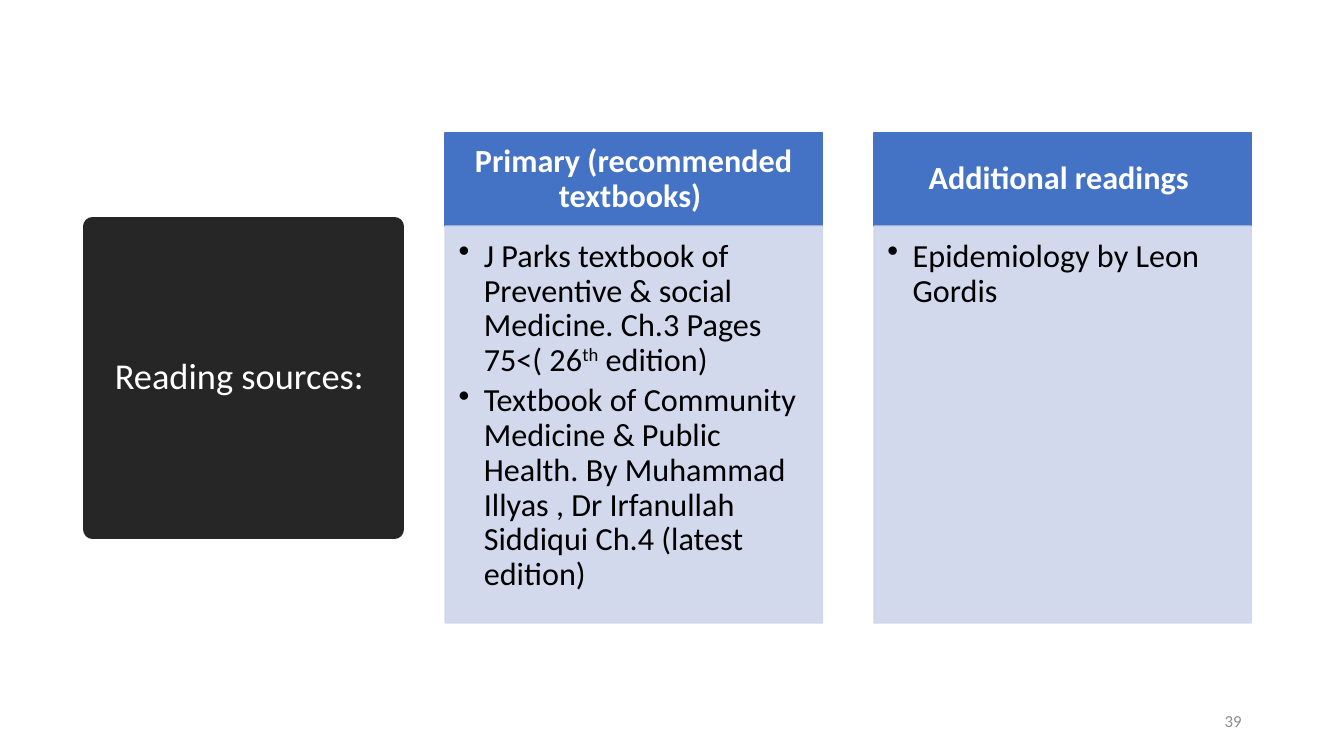
from lxml.etree import SubElement
from pptx import Presentation
from pptx.dml.color import RGBColor
from pptx.enum.shapes import MSO_SHAPE as Shape
from pptx.enum.text import MSO_ANCHOR as Anchor, PP_ALIGN as Align
from pptx.oxml.ns import qn
from pptx.util import Pt

CHARCOAL = RGBColor(0x26, 0x26, 0x26)
BLUE = RGBColor(0x44, 0x72, 0xC4)
PALE_BLUE = RGBColor(0xCF, 0xD5, 0xEA)
WHITE = RGBColor(0xFF, 0xFF, 0xFF)
BLACK = RGBColor(0, 0, 0)
GREY = RGBColor(0x8C, 0x8C, 0x8C)

FONT = "Calibri"
HEADER_HEIGHT = 66.4
COLUMN_WIDTH = 269.5
COLUMN_GAP = 36.8

READINGS = [
    ("Primary (recommended textbooks) ", [
        [("J Parks textbook of Preventive & social Medicine. Ch.3 Pages 75<( 26", False),
         ("th", True), (" edition)", False)],
        [("Textbook of Community Medicine & Public Health. By Muhammad Illyas , "
          "Dr Irfanullah Siddiqui Ch.4 (latest edition)", False)],
    ]),
    ("Additional readings ", [[("Epidemiology by Leon Gordis", False)]]),
]


def add_box(slide, box, color, line_width):
    shape = slide.shapes.add_shape(Shape.RECTANGLE, *map(Pt, box))
    shape.shadow.inherit = False
    shape.fill.solid()
    shape.fill.fore_color.rgb = color
    shape.line.color.rgb = color
    shape.line.width = Pt(line_width)
    return shape


def set_frame(shape, anchor, margins):
    frame = shape.text_frame
    frame.word_wrap = True
    frame.vertical_anchor = anchor
    (frame.margin_left, frame.margin_top,
     frame.margin_right, frame.margin_bottom) = map(Pt, margins)
    return frame


def style_paragraph(paragraph, size, color, align, bold=False, spacing=0.9):
    paragraph.alignment = align
    paragraph.line_spacing = spacing
    font = paragraph.font
    font.name, font.size, font.bold = FONT, Pt(size), bold
    font.color.rgb = color


def add_bullet(paragraph):
    properties = paragraph._p.get_or_add_pPr()
    properties.set("marL", str(Pt(18)))
    properties.set("indent", str(Pt(-18)))
    bullet = properties.makeelement(qn("a:buChar"), {"char": "•"})
    properties.find(qn("a:defRPr")).addprevious(bullet)


def add_title(slide, box):
    shape = add_box(slide, box, CHARCOAL, 13.75)
    SubElement(shape.line._get_or_add_ln(), qn("a:round"))
    paragraph = set_frame(shape, Anchor.MIDDLE, (7.2, 3.6, 7.2, 3.6)).paragraphs[0]
    paragraph.text = "Reading sources: "
    style_paragraph(paragraph, 26, WHITE, Align.CENTER)


def add_column(slide, box, heading, entries):
    left, top, width, height = box
    header = add_box(slide, (left, top, width, HEADER_HEIGHT), BLUE, 1)
    paragraph = set_frame(header, Anchor.MIDDLE, (13, 7.2, 13, 7.2)).paragraphs[0]
    paragraph.text = heading
    style_paragraph(paragraph, 23, WHITE, Align.CENTER, bold=True)

    body_box = (left, top + HEADER_HEIGHT, width, height - HEADER_HEIGHT)
    body = add_box(slide, body_box, PALE_BLUE, 1)
    for color in body._element.spPr.iter(qn("a:srgbClr")):
        SubElement(color, qn("a:alpha"), val="90000")
    frame = set_frame(body, Anchor.TOP, (9.6, 9.6, 13, 14.4))
    for index, entry in enumerate(entries):
        paragraph = frame.add_paragraph() if index else frame.paragraphs[0]
        style_paragraph(paragraph, 23, BLACK, Align.LEFT)
        paragraph.space_after = Pt(4)
        add_bullet(paragraph)
        for text, raised in entry:
            run = paragraph.add_run()
            run.text = text
            if raised:
                run._r.get_or_add_rPr().set("baseline", "30000")


def add_slide_number(slide, box):
    shape = slide.shapes.add_textbox(*map(Pt, box))
    paragraph = set_frame(shape, Anchor.MIDDLE, (7.2, 3.6, 7.2, 3.6)).paragraphs[0]
    paragraph.text = "39"
    style_paragraph(paragraph, 12, GREY, Align.RIGHT, spacing=1.0)


def main():
    presentation = Presentation()
    presentation.slide_width, presentation.slide_height = Pt(960), Pt(540)
    slide = presentation.slides.add_slide(presentation.slide_layouts[6])
    add_title(slide, (66, 162, 216, 216))
    for index, (heading, entries) in enumerate(READINGS):
        left = 318 + index * (COLUMN_WIDTH + COLUMN_GAP)
        add_column(slide, (left, 95, COLUMN_WIDTH, 350), heading, entries)
    add_slide_number(slide, (678, 500.5, 216, 28.75))
    presentation.save("out.pptx")


if __name__ == "__main__":
    main()
